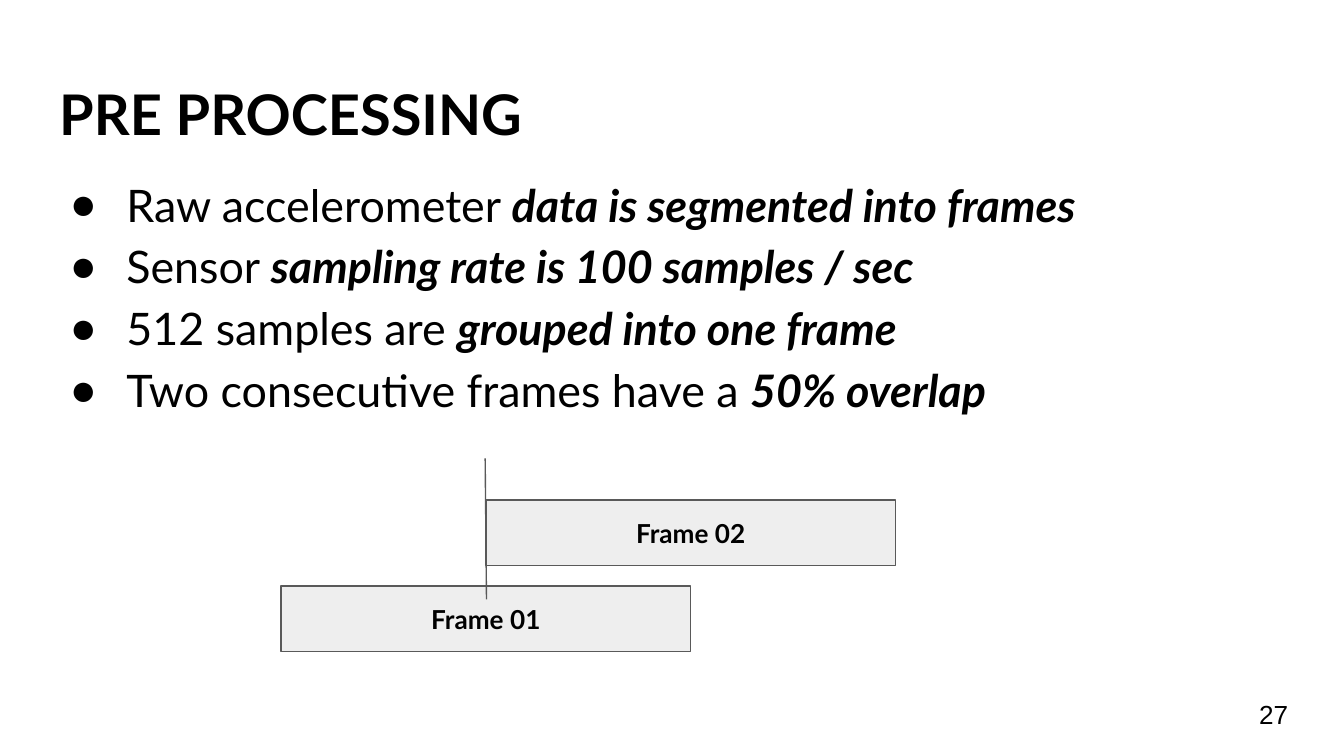
from dataclasses import dataclass

from lxml.etree import SubElement
from pptx import Presentation
from pptx.dml.color import RGBColor
from pptx.enum.shapes import MSO_CONNECTOR, MSO_SHAPE
from pptx.enum.text import MSO_ANCHOR, MSO_AUTO_SIZE, PP_ALIGN
from pptx.oxml.ns import qn
from pptx.util import Inches, Pt


@dataclass(frozen=True)
class Theme:
    text: str = "000000"
    frame_fill: str = "EEEEEE"
    outline: str = "595959"
    font: str = "Lato"
    plain_font: str = "Arial"
    title_size: int = 30
    body_size: int = 24
    label_size: int = 14
    line_width: float = 0.75


THEME = Theme()

BULLETS = [
    ("Raw accelerometer ", "data is segmented into frames"),
    ("Sensor ", "sampling rate is 100 samples / sec"),
    ("512 samples are ", "grouped into one frame"),
    ("Two consecutive frames have a ", "50% overlap"),
]

FRAME_WIDTH, FRAME_HEIGHT = 3.05, 0.49
FRAME_LEFT, FRAME_TOP = 2.09, 4.36
FRAME_RISE = 0.64
OVERLAP = 0.5


def place(shape, left, top, width, height):
    shape.left, shape.top = Inches(left), Inches(top)
    shape.width, shape.height = Inches(width), Inches(height)


def prepare_frame(text_frame, anchor=MSO_ANCHOR.TOP):
    """Fix the box size, wrap the text and set equal insets."""
    text_frame.auto_size = MSO_AUTO_SIZE.NONE
    text_frame.word_wrap = True
    text_frame.vertical_anchor = anchor
    text_frame.margin_left = text_frame.margin_right = Inches(0.1)
    text_frame.margin_top = text_frame.margin_bottom = Inches(0.1)


def add_text(paragraph, text, size, font=THEME.font, bold=False, italic=False,
             align=PP_ALIGN.LEFT):
    paragraph.alignment = align
    run = paragraph.add_run()
    run.text = text
    run.font.name = font
    run.font.size = Pt(size)
    run.font.bold = bold
    run.font.italic = italic
    run.font.color.rgb = RGBColor.from_string(THEME.text)


def set_bullet(paragraph):
    properties = paragraph._p.get_or_add_pPr()
    properties.set("marL", str(Inches(0.5)))
    properties.set("indent", str(Inches(-0.42)))
    color = SubElement(properties, qn("a:buClr"))
    SubElement(color, qn("a:srgbClr"), val=THEME.text)
    SubElement(properties, qn("a:buFont"), typeface=THEME.plain_font)
    SubElement(properties, qn("a:buChar"), char="●")


def fill_title(title):
    place(title, 0.34, 0.49, 9.32, 0.63)
    prepare_frame(title.text_frame)
    add_text(title.text_frame.paragraphs[0], "PRE PROCESSING",
             THEME.title_size, bold=True)


def fill_bullets(body):
    place(body, 0.34, 1.16, 9.32, 1.52)
    text_frame = body.text_frame
    prepare_frame(text_frame)
    for index, (lead, emphasis) in enumerate(BULLETS):
        paragraph = text_frame.add_paragraph() if index else text_frame.paragraphs[0]
        paragraph.line_spacing = 1.15
        paragraph.space_before = Pt(0)
        set_bullet(paragraph)
        add_text(paragraph, lead, THEME.body_size)
        add_text(paragraph, emphasis, THEME.body_size, bold=True, italic=True)


def style_line(line):
    line.color.rgb = RGBColor.from_string(THEME.outline)
    line.width = Pt(THEME.line_width)


def add_frame(slide, number):
    """Draw a data frame, shifted by the overlap from the one before it."""
    step = number - 1
    left = FRAME_LEFT + step * FRAME_WIDTH * OVERLAP
    top = FRAME_TOP - step * FRAME_RISE
    frame = slide.shapes.add_shape(
        MSO_SHAPE.RECTANGLE, Inches(left), Inches(top),
        Inches(FRAME_WIDTH), Inches(FRAME_HEIGHT))
    frame.shadow.inherit = False
    frame.fill.solid()
    frame.fill.fore_color.rgb = RGBColor.from_string(THEME.frame_fill)
    style_line(frame.line)
    prepare_frame(frame.text_frame, MSO_ANCHOR.MIDDLE)
    add_text(frame.text_frame.paragraphs[0], f"Frame {number:02d}",
             THEME.label_size, bold=True, align=PP_ALIGN.CENTER)


def add_overlap_marker(slide):
    marker = slide.shapes.add_connector(
        MSO_CONNECTOR.STRAIGHT,
        Inches(3.61), Inches(3.41), Inches(3.62), Inches(4.46))
    style_line(marker.line)
    SubElement(marker._element.spPr, qn("a:effectLst"))


def add_page_number(slide, number):
    box = slide.shapes.add_textbox(
        Inches(9.27), Inches(5.1), Inches(0.6), Inches(0.43))
    prepare_frame(box.text_frame, MSO_ANCHOR.MIDDLE)
    add_text(box.text_frame.paragraphs[0], str(number), THEME.label_size,
             font=THEME.plain_font)


def main():
    presentation = Presentation()
    presentation.slide_width = Inches(10)
    presentation.slide_height = presentation.slide_width * 9 // 16
    slide = presentation.slides.add_slide(presentation.slide_layouts[1])
    fill_title(slide.shapes.title)
    fill_bullets(slide.placeholders[1])
    for number in (1, 2):
        add_frame(slide, number)
    add_overlap_marker(slide)
    add_page_number(slide, 27)
    presentation.save("out.pptx")


if __name__ == "__main__":
    main()
